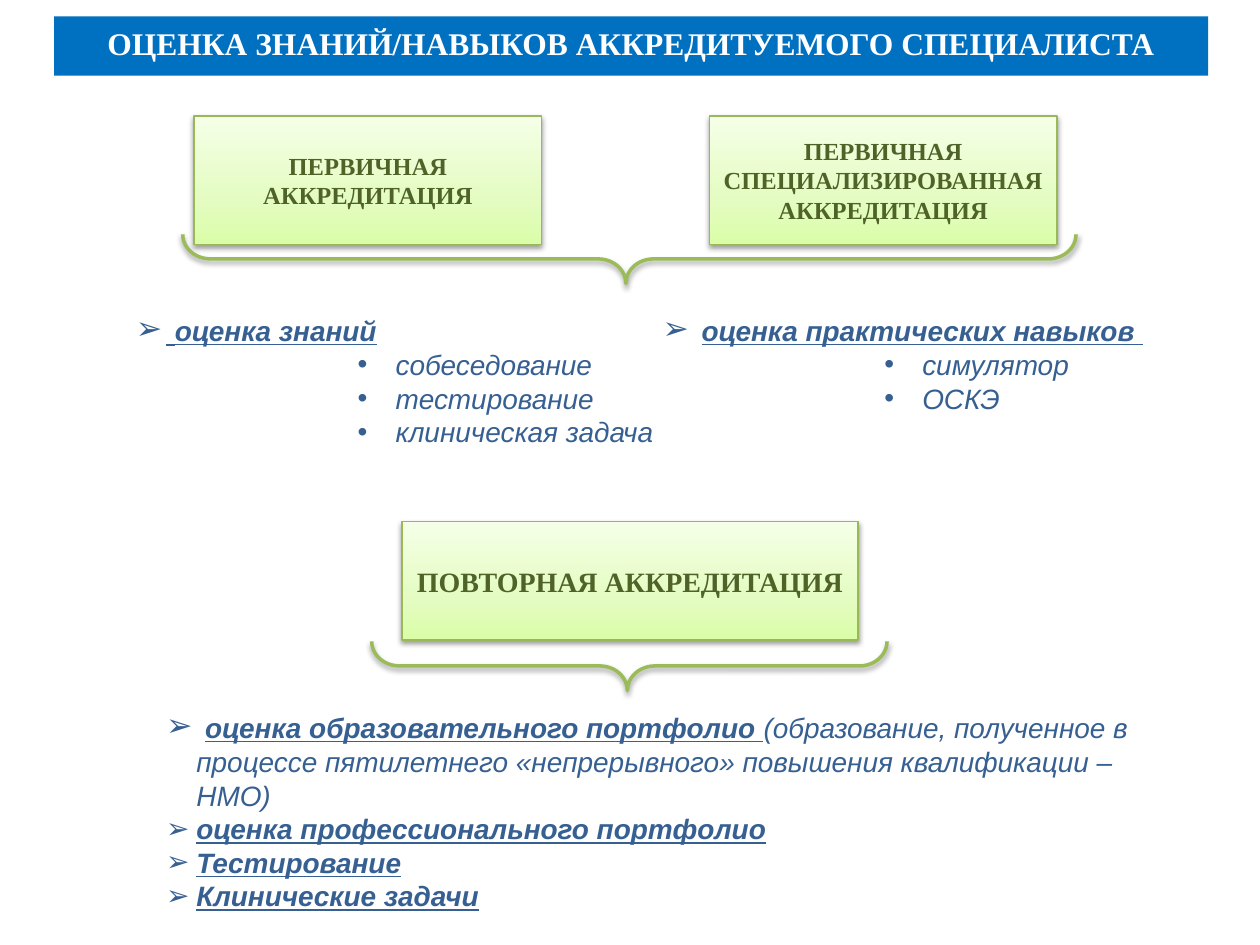
from dataclasses import dataclass

from lxml import etree
from pptx import Presentation
from pptx.dml.color import RGBColor
from pptx.enum.shapes import MSO_SHAPE as Shape
from pptx.enum.text import MSO_ANCHOR as Anchor, MSO_AUTO_SIZE as Fit, PP_ALIGN as Align
from pptx.oxml.ns import qn
from pptx.util import Inches, Pt


@dataclass(frozen=True)
class Theme:
    serif: str = "Times New Roman"
    sans: str = "Arial"
    banner: str = "0070C0"
    white: str = "FFFFFF"
    olive: str = "4F6228"
    blue: str = "376092"
    edge: str = "98B955"
    brace: str = "9BBB59"
    fade: tuple = ((0, "DAFDA7"), (35, "E4FCC2"), (100, "F5FFE7"))
    big: int = 18
    mid: int = 16
    small: int = 14


T = Theme()


def rgb(code):
    return RGBColor.from_string(code)


def sub(parent, tag, **attrs):
    return etree.SubElement(parent, qn(tag), {k: str(v) for k, v in attrs.items()})


def write(para, text, size=T.mid, font=T.sans, color=T.blue,
          bold=False, italic=False, under=False, outline=False):
    run = para.add_run()
    run.text = text
    f = run.font
    f.size, f.name, f.bold, f.italic, f.underline = Pt(size), font, bold, italic, under
    f.color.rgb = rgb(color)
    if outline:
        line = etree.Element(qn("a:ln"), w=str(Pt(0.75)))
        sub(sub(line, "a:solidFill"), "a:srgbClr", val=color)
        run._r.get_or_add_rPr().insert(0, line)


class Deck:
    def __init__(self, theme):
        self.theme = theme
        self.prs = Presentation()
        self.prs.slide_width, self.prs.slide_height = Inches(10), Inches(7.5)
        self.slide = self.prs.slides.add_slide(self.prs.slide_layouts[6])

    def shape(self, kind, at):
        item = self.slide.shapes.add_shape(kind, *map(Inches, at))
        item.shadow.inherit = False
        return item

    def shade(self, item):
        effect = item._element.spPr.find(qn("a:effectLst"))
        shadow = sub(effect, "a:outerShdw", blurRad=Pt(3.1), dist=Pt(1.6),
                     dir=90 * 60000, rotWithShape=0)
        sub(sub(shadow, "a:srgbClr", val="000000"), "a:alpha", val=38000)

    def label(self, item, text, **style):
        frame = item.text_frame
        frame.word_wrap, frame.vertical_anchor = True, Anchor.MIDDLE
        para = frame.paragraphs[0]
        para.alignment = Align.CENTER
        write(para, text, font=self.theme.serif, bold=True, **style)
        return para

    def banner(self, at, text):
        item = self.shape(Shape.RECTANGLE, at)
        item.fill.solid()
        item.fill.fore_color.rgb = rgb(self.theme.banner)
        item.line.fill.background()
        para = self.label(item, text, size=self.theme.big, color=self.theme.white)
        para.line_spacing = 0.8

    def card(self, at, text, size):
        item = self.shape(Shape.RECTANGLE, at)
        item.fill.gradient()
        item.fill.gradient_angle = 90
        stops = item._element.spPr.find(".//" + qn("a:gsLst"))
        stops.clear()
        for pos, code in self.theme.fade:
            sub(sub(stops, "a:gs", pos=pos * 1000), "a:srgbClr", val=code)
        item.line.color.rgb, item.line.width = rgb(self.theme.edge), Pt(0.75)
        self.shade(item)
        self.label(item, text, size=size, color=self.theme.olive, outline=True)

    def brace(self, at):
        item = self.shape(Shape.RIGHT_BRACE, at)
        item.rotation = 90
        item.adjustments[0], item.adjustments[1] = 0.563, 0.504
        item.fill.background()
        item.line.color.rgb, item.line.width = rgb(self.theme.brace), Pt(2)
        self.shade(item)

    def bullets(self, at, rows, wrap=True):
        """Each row is a level and its runs of (text, format)."""
        frame = self.slide.shapes.add_textbox(*map(Inches, at)).text_frame
        frame.word_wrap, frame.auto_size = wrap, Fit.SHAPE_TO_FIT_TEXT
        for n, (level, runs) in enumerate(rows):
            para = frame.add_paragraph() if n else frame.paragraphs[0]
            para.level = level
            props = para._p.get_or_add_pPr()
            props.set("marL", str(Inches(2 if level else 0.24)))
            props.set("indent", str(-Inches(0.24)))
            sub(props, "a:buFont", typeface=self.theme.sans)
            sub(props, "a:buChar", char="•" if level else "➢")
            for text, style in runs:
                write(para, text, italic=True, **style)

    def save(self):
        self.prs.save("out.pptx")


HEAD = dict(bold=True, under=True)
LEAD = (" ", dict(size=T.big))


def items(*names):
    return [(4, [(" " + name, {})]) for name in names]


def main():
    deck = Deck(T)
    deck.banner((0.43, 0.13, 9.16, 0.47),
                "ОЦЕНКА ЗНАНИЙ/НАВЫКОВ АККРЕДИТУЕМОГО СПЕЦИАЛИСТА")

    # Primary accreditation
    deck.card((1.54, 0.92, 2.76, 1.02), "ПЕРВИЧНАЯ АККРЕДИТАЦИЯ", T.small)
    deck.bullets((0.98, 2.41, 4.41, 1.21), [
        (0, [(" ", dict(HEAD, size=T.big)), ("оценка знаний", HEAD)]),
        *items("собеседование", "тестирование", "клиническая задача"),
    ])
    deck.card((5.63, 0.92, 2.76, 1.02),
              "ПЕРВИЧНАЯ СПЕЦИАЛИЗИРОВАННАЯ АККРЕДИТАЦИЯ", T.small)

    # Repeat accreditation
    deck.card((3.19, 4.14, 3.62, 0.94), "ПОВТОРНАЯ АККРЕДИТАЦИЯ", T.mid)
    deck.bullets((1.22, 5.56, 8.19, 1.48), [
        (0, [LEAD, ("оценка образовательного портфолио ", HEAD),
             ("(образование, полученное в процессе пятилетнего "
              "«непрерывного» повышения квалификации – НМО)", {})]),
        *[(0, [(name, HEAD)]) for name in (
            "оценка профессионального портфолио", "Тестирование", "Клинические задачи")],
    ])

    # Braces under the cards
    deck.brace((4.8, -1.49, 0.39, 7.09))
    deck.brace((4.8, 3.24, 0.39, 4.09))

    # Practical skills
    deck.bullets((5.16, 2.41, 4.01, 0.94), [
        (0, [LEAD, ("оценка практических навыков ", HEAD)]),
        *items("симулятор", "ОСКЭ"),
    ], wrap=False)

    deck.save()


if __name__ == "__main__":
    main()
